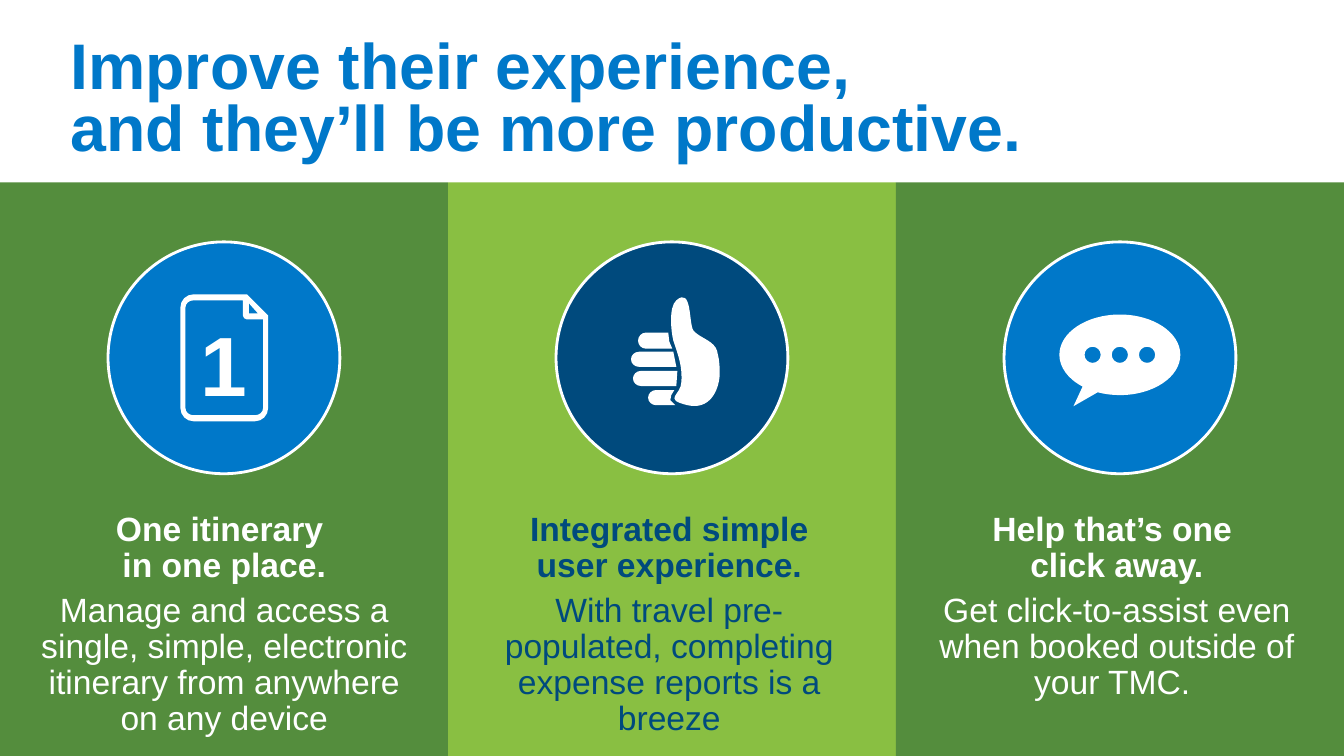
"""Build a slide with three benefit panels, each with an icon and a message."""
from dataclasses import dataclass
from math import cos, radians, sin, tan

from lxml import etree
from pptx import Presentation
from pptx.dml.color import RGBColor
from pptx.enum.shapes import MSO_SHAPE
from pptx.enum.text import MSO_ANCHOR, MSO_AUTO_SIZE, PP_ALIGN
from pptx.oxml.ns import qn
from pptx.util import Inches, Pt

RECTANGLE, OVAL = MSO_SHAPE.RECTANGLE, MSO_SHAPE.OVAL
TOP = MSO_ANCHOR.TOP
FIXED, GROW = MSO_AUTO_SIZE.NONE, MSO_AUTO_SIZE.SHAPE_TO_FIT_TEXT
LEFT, CENTER = PP_ALIGN.LEFT, PP_ALIGN.CENTER
FONT = "Arial"
WHITE, BLUE, NAVY = "FFFFFF", "0078C9", "004A7D"
DARK_GREEN, LIGHT_GREEN = "548D3D", "89BF42"
SLIDE_WIDTH, SLIDE_HEIGHT = 13.333, 7.5
PANEL_TOP, PANEL_WIDTH = 1.81, SLIDE_WIDTH / 3
BADGE_TOP, BADGE_SIZE = 2.4, 2.3
MESSAGE_TOP = 5.08

Point = tuple[float, float]
Segment = tuple[Point, ...]
Contour = list[Segment]


@dataclass
class Panel:
    background: str
    badge: str
    ink: str
    heading: str
    detail: str
    message_left: float
    message_width: float
    message_height: float
    icon: list[Contour]


def corners(*points: Point) -> Contour:
    """Return straight segments to the points."""
    return [(point,) for point in points]


def arc(cx: float, cy: float, rx: float, ry: float, start: float, end: float) -> Contour:
    """Return an anticlockwise arc of cubic curves, split where it crosses an axis."""
    def at(angle: float, lead: float = 0) -> Point:
        """Return the point at an angle, moved along its tangent."""
        a = radians(angle)
        return cx + rx * (cos(a) - lead * sin(a)), cy + ry * (sin(a) + lead * cos(a))

    crossings = [angle for angle in (270, 180, 90, 0) if end < angle < start]
    stops = [start, *crossings, end]
    contour = corners(at(start))
    for first, last in zip(stops, stops[1:]):
        lead = 4 / 3 * tan(radians(last - first) / 4)
        contour.append((at(first, lead), at(last, -lead), at(last)))
    return contour


def page_icon() -> list[Contour]:
    """Return a page outline with a folded corner."""
    def rounded_corners(rx: float, ry: float) -> Contour:
        """Return the top left, bottom left and bottom right corners."""
        centers = ((1.92, 3.05, 270), (1.92, 4.05, 180), (2.53, 4.05, 90))
        return [segment for x, y, angle in centers
                for segment in arc(x, y, rx, ry, angle, angle - 90)]

    outside = corners((2.45, 2.92)) + rounded_corners(0.13, 0.13) + corners((2.66, 3.13))
    inside = (corners((2.41, 2.98)) + rounded_corners(0.08, 0.07)
              + corners((2.61, 3.17), (2.45, 3.17))
              + [((2.43, 3.17), (2.41, 3.15), (2.41, 3.13))])
    fold = corners((2.47, 3.01), (2.56, 3.11), (2.47, 3.11))
    return [outside, inside, fold]


def thumb_icon() -> list[Contour]:
    """Return a raised thumb and four fingers."""
    thumb = corners((7.12, 3.51)) + [
        ((7.12, 3.49), (7.11, 3.47), (7.1, 3.45)),
        ((7.05, 3.37), (6.94, 3.35), (6.88, 3.28)),
        ((6.83, 3.21), (6.87, 2.84), (6.71, 2.98)),
        ((6.63, 3.05), (6.66, 3.3), (6.68, 3.38)),
        ((6.73, 3.53), (6.77, 3.63), (6.76, 3.79)),
        ((6.76, 3.92), (6.57, 3.96), (6.82, 4.02)),
        ((7.04, 4.07), (7.13, 3.88), (7.14, 3.72)),
        ((7.14, 3.66), (7.14, 3.58), (7.12, 3.51)),
    ]
    fingers = [
        (6.41, [(6.67, 3.46), (6.64, 3.39), (6.63, 3.3)]),
        (6.34, [(6.71, 3.64), (6.68, 3.49)]),
        (6.36, [(6.71, 3.83), (6.72, 3.68)]),
        (6.51, [(6.7, 4.02), (6.65, 3.97), (6.66, 3.92), (6.69, 3.87)]),
    ]
    contours = [thumb]
    for x, knuckle in fingers:
        bottom, top = knuckle[0][1], knuckle[-1][1]
        tip = arc(x, (top + bottom) / 2, 0.08, (bottom - top) / 2, 270, 90)
        contours.append(tip + corners(*knuckle))
    return contours


def speech_icon() -> list[Contour]:
    """Return a speech bubble with three round holes."""
    x, y, dot = 11.11, 3.52, 0.08
    bubble = (arc(x, y, 0.6, 0.4, 270, 128) + corners((10.65, 4.03))
              + arc(x, y, 0.6, 0.4, 111.5, -90))
    return [bubble] + [arc(x + step * 0.27, y, dot, dot, 360, 0) for step in (-1, 0, 1)]


def rgb(color: str) -> RGBColor:
    """Convert a hex string to a colour."""
    return RGBColor.from_string(color)


def paint(shape, fill: str, outline: str | None = None) -> None:
    """Fill a shape, outline it if asked, and remove its shadow."""
    shape.shadow.inherit = False
    shape.fill.solid()
    shape.fill.fore_color.rgb = rgb(fill)
    if outline:
        shape.line.color.rgb = rgb(outline)
        shape.line.width = Pt(2)
    else:
        shape.line.fill.background()


def draw_icon(slide, contours: list[Contour]) -> None:
    """Draw closed contours as one white shape, bending its curved segments."""
    ends = [[(Inches(s[-1][0]), Inches(s[-1][1])) for s in contour] for contour in contours]
    builder = slide.shapes.build_freeform(*ends[0][0])
    builder.add_line_segments(ends[0][1:])
    for contour_ends in ends[1:]:
        builder.move_to(*contour_ends[0])
        builder.add_line_segments(contour_ends[1:])
    icon = builder.convert_to_shape()
    segments = [segment for contour in contours for segment in contour[1:]]
    for line, segment in zip(list(icon.element.iter(qn("a:lnTo"))), segments):
        if len(segment) == 3:
            curve = etree.Element(qn("a:cubicBezTo"))
            for x, y in segment:
                etree.SubElement(curve, qn("a:pt"), x=str(Inches(x) - icon.left),
                                 y=str(Inches(y) - icon.top))
            line.getparent().replace(line, curve)
    paint(icon, WHITE)


def prepare_frame(frame, resize, inset: float = 0) -> None:
    """Set wrapping, anchoring, resizing and margins of a text frame."""
    frame.word_wrap = True
    frame.vertical_anchor = TOP
    frame.auto_size = resize
    frame.margin_left = frame.margin_right = Inches(inset)
    frame.margin_top = frame.margin_bottom = Inches(inset / 2)


def write(paragraph, text: str, size: float, color: str, bold: bool,
          align=CENTER, spacing: float = 1.0) -> None:
    """Write and format one paragraph."""
    paragraph.text = text
    paragraph.alignment, paragraph.line_spacing = align, spacing
    for run in paragraph.runs:
        run.font.name, run.font.size, run.font.bold = FONT, Pt(size), bold
        run.font.color.rgb = rgb(color)


def draw_panel(slide, index: int, panel: Panel) -> None:
    """Draw a panel with its badge, icon and message."""
    left = index * PANEL_WIDTH
    background = slide.shapes.add_shape(RECTANGLE, Inches(left), Inches(PANEL_TOP),
                                        Inches(PANEL_WIDTH), Inches(SLIDE_HEIGHT - PANEL_TOP))
    paint(background, panel.background)
    badge = slide.shapes.add_shape(OVAL, Inches(left + (PANEL_WIDTH - BADGE_SIZE) / 2),
                                   Inches(BADGE_TOP), Inches(BADGE_SIZE), Inches(BADGE_SIZE))
    paint(badge, panel.badge, WHITE)
    draw_icon(slide, panel.icon)
    message = slide.shapes.add_textbox(
        Inches(panel.message_left), Inches(MESSAGE_TOP),
        Inches(panel.message_width), Inches(panel.message_height)).text_frame
    prepare_frame(message, GROW)
    heading, detail = message.paragraphs[0], message.add_paragraph()
    write(heading, panel.heading, 24, panel.ink, True, spacing=0.9)
    write(detail, panel.detail, 24, panel.ink, False, spacing=0.9)
    heading.space_after = detail.space_after = Pt(6)


def main() -> None:
    """Build and save the slide."""
    deck = Presentation()
    deck.slide_width, deck.slide_height = Inches(SLIDE_WIDTH), Inches(SLIDE_HEIGHT)
    slide = deck.slides.add_slide(deck.slide_layouts[5])
    title = slide.shapes.title
    title.left, title.top = Inches(0.7), Inches(0.4)
    title.width, title.height = Inches(11.93), Inches(0.67)
    prepare_frame(title.text_frame, FIXED)
    write(title.text_frame.paragraphs[0],
          "Improve their experience, \vand they’ll be more productive.", 46, BLUE, True, LEFT, 0.8)
    panels = [
        Panel(DARK_GREEN, BLUE, WHITE, "One itinerary \vin one place.",
              "Manage and access a single, simple, electronic itinerary from anywhere "
              "on any device", 0.31, 3.83, 2.27, page_icon()),
        Panel(LIGHT_GREEN, NAVY, NAVY, "Integrated simple user experience.",
              "With travel pre-populated, completing expense reports is a breeze",
              4.91, 3.46, 2.27, thumb_icon()),
        Panel(DARK_GREEN, BLUE, WHITE, "Help that’s one \vclick away.",
              "Get click-to-assist even when booked outside of your TMC. ",
              9.08, 4, 1.91, speech_icon()),
    ]
    for index, panel in enumerate(panels):
        draw_panel(slide, index, panel)
    numeral = slide.shapes.add_textbox(Inches(1.79), Inches(3.05), Inches(0.87), Inches(1.11))
    prepare_frame(numeral.text_frame, GROW, 0.1)
    write(numeral.text_frame.paragraphs[0], "1", 60, WHITE, True)
    deck.save("out.pptx")


if __name__ == "__main__":
    main()
